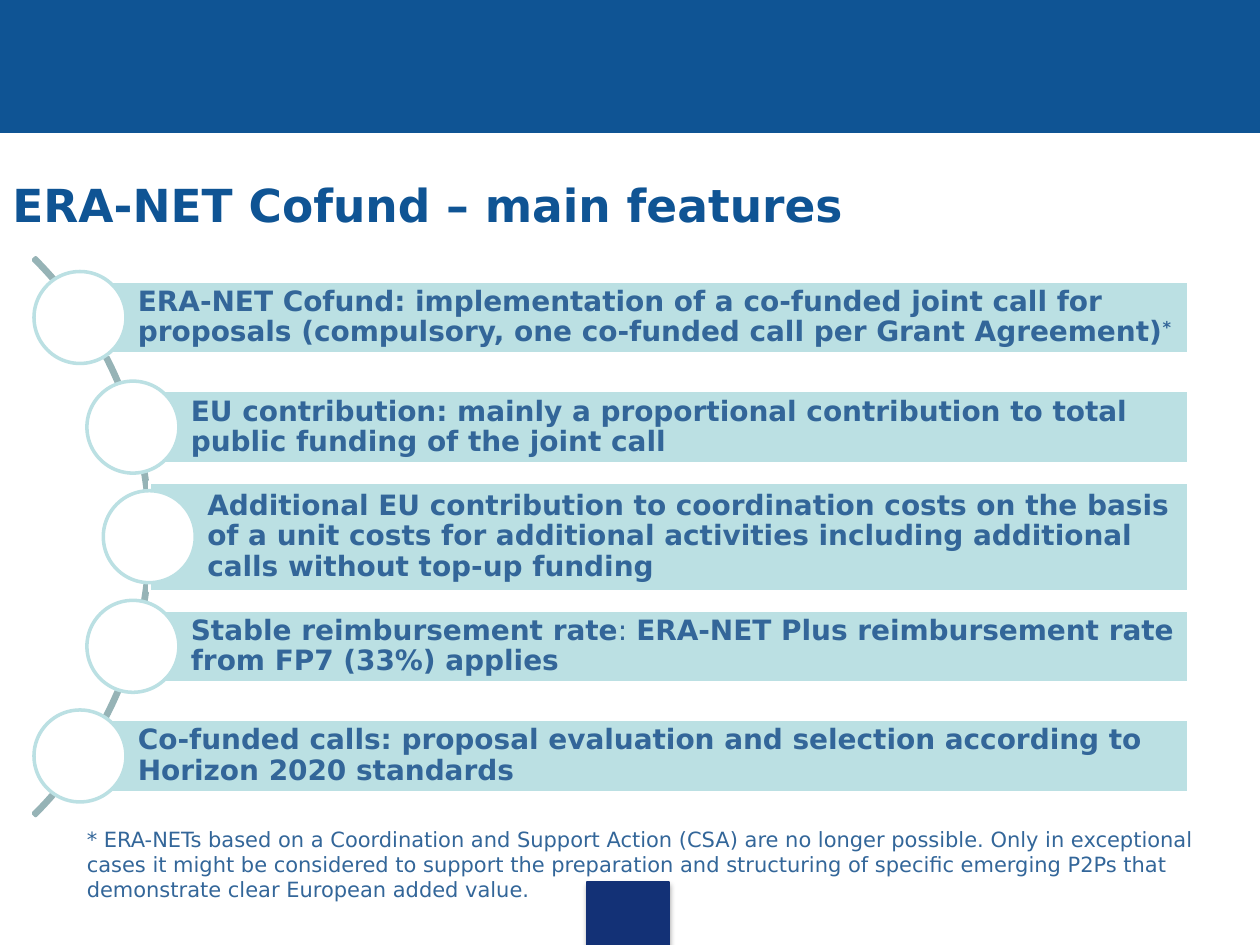
from dataclasses import dataclass
from typing import Optional

from lxml.etree import SubElement
from pptx import Presentation
from pptx.dml.color import RGBColor
from pptx.enum.shapes import MSO_SHAPE
from pptx.enum.text import MSO_ANCHOR, PP_ALIGN
from pptx.oxml.ns import qn
from pptx.util import Emu, Inches, Pt

COLORS = {
    "band": "0F5494", "badge": "133176", "arc": "96B3B6",
    "bar": "BBE0E3", "text": "336699", "white": "FFFFFF", "shadow": "000000",
}
FONT = "DejaVu Sans"
COLS, ROWS = 100, 75
BAR_RIGHT, FIRST_MIDDLE, PITCH, CIRCLE = 94.35, 25.2, 8.7, 7.3


@dataclass(frozen=True)
class Box:
    """Position and size in grid columns and rows."""
    col: float
    row: float
    cols: float
    rows: float


@dataclass(frozen=True)
class Span:
    """A stretch of text with its own style."""
    text: str
    size: float = 16
    color: str = "text"
    bold: bool = True
    baseline: int = 0
    break_after: bool = False


@dataclass(frozen=True)
class Feature:
    """One bar of the list, starting at the centre of its circle."""
    col: float
    spans: tuple
    rows: float = 5.8


FEATURES = (
    Feature(6.35, (
        Span("ERA-NET Cofund: implementation of a co-funded joint call for proposals "
             "(compulsory, one co-funded call per Grant Agreement)"),
        Span("*", baseline=30000))),
    Feature(10.55, (
        Span("EU contribution: mainly a proportional contribution to total "
             "public funding of the joint call"),)),
    Feature(11.85, (
        Span("Additional EU contribution to coordination costs on the basis of a unit costs "
             "for additional activities including additional calls without top-up funding"),), 8.7),
    Feature(10.55, (
        Span("Stable reimbursement rate"),
        Span(": ", bold=False),
        Span("ERA-NET Plus reimbursement rate from FP7 (33%) applies"))),
    Feature(6.35, (
        Span("Co-funded calls: proposal evaluation and selection according to ", break_after=True),
        Span("Horizon 2020 standards"))),
)
TITLE = Span("ERA-NET Cofund – main features", 26, "band")
FOOTNOTE = Span(
    "* ERA-NETs based on a Coordination and Support Action (CSA) are no longer possible. "
    "Only in exceptional cases it might be considered to support the preparation and structuring "
    "of specific emerging P2Ps that demonstrate clear European added value.", 12, bold=False)


def rgb(name: str) -> RGBColor:
    """Look up a named colour."""
    return RGBColor.from_string(COLORS[name])


def place(prs, box: Box) -> tuple:
    """Turn a grid box into slide lengths."""
    w, h = prs.slide_width / COLS, prs.slide_height / ROWS
    return tuple(Emu(round(v)) for v in (box.col * w, box.row * h, box.cols * w, box.rows * h))


def add_shape(prs, s, kind: MSO_SHAPE, box: Box, fill: Optional[str], line: str, width: float):
    """Draw a preset shape without a shadow."""
    sp = s.shapes.add_shape(kind, *place(prs, box))
    sp.shadow.inherit = False
    if fill:
        sp.fill.solid()
        sp.fill.fore_color.rgb = rgb(fill)
    else:
        sp.fill.background()
    sp.line.color.rgb = rgb(line)
    sp.line.width = Pt(width)
    return sp


def write(sp, spans: tuple, anchor: MSO_ANCHOR, spacing: float = 1.0) -> None:
    """Fill a shape with one left-aligned paragraph."""
    tf = sp.text_frame
    tf.word_wrap = True
    tf.vertical_anchor = anchor
    p = tf.paragraphs[0]
    p.alignment = PP_ALIGN.LEFT
    p.line_spacing = spacing
    for span in spans:
        r = p.add_run()
        r.text = span.text
        r.font.name, r.font.size, r.font.bold = FONT, Pt(span.size), span.bold
        r.font.color.rgb = rgb(span.color)
        if span.baseline:
            r.font._element.set("baseline", str(span.baseline))
        if span.break_after:
            p.add_line_break()


def add_text(prs, s, box: Box, span: Span, anchor: MSO_ANCHOR) -> None:
    """Draw a text box."""
    write(s.shapes.add_textbox(*place(prs, box)), (span,), anchor)


def add_drop_shadow(sp) -> None:
    """Give a shape a soft shadow below it."""
    effects = sp._element.spPr.find(qn("a:effectLst"))
    shadow = SubElement(effects, qn("a:outerShdw"), blurRad=str(Pt(3.1)), dist=str(Pt(1.8)),
                        dir="5400000", rotWithShape="0")
    color = SubElement(shadow, qn("a:srgbClr"), val=COLORS["shadow"])
    SubElement(color, qn("a:alpha"), val="35000")


def add_feature(prs, s, feature: Feature, middle: float) -> None:
    """Draw a bar with its text and the circle at its left end."""
    bar = Box(feature.col, middle - feature.rows / 2, BAR_RIGHT - feature.col, feature.rows)
    sp = add_shape(prs, s, MSO_SHAPE.RECTANGLE, bar, "bar", "white", 2)
    tf = sp.text_frame
    tf.margin_left = Inches(0.46)
    tf.margin_top = tf.margin_right = tf.margin_bottom = Inches(0.04)
    write(sp, feature.spans, MSO_ANCHOR.MIDDLE, 0.9)
    circle = Box(feature.col - CIRCLE / 2, middle - CIRCLE / 2, CIRCLE, CIRCLE)
    add_shape(prs, s, MSO_SHAPE.OVAL, circle, "white", "bar", 2)


def main() -> None:
    """Build the slide and save it."""
    prs = Presentation()
    prs.slide_width, prs.slide_height = Inches(10), Inches(7.5)
    s = prs.slides.add_slide(prs.slide_layouts[6])
    add_shape(prs, s, MSO_SHAPE.RECTANGLE, Box(0, 0, COLS, 10.5), "band", "band", 0.75)
    badge = add_shape(prs, s, MSO_SHAPE.RECTANGLE, Box(46.6, 70, 6.5, 5), "badge", "badge", 0.75)
    add_drop_shadow(badge)
    add_text(prs, s, Box(0, 11.5, 91.4, 9.5), TITLE, MSO_ANCHOR.MIDDLE)
    arc = add_shape(prs, s, MSO_SHAPE.BLOCK_ARC, Box(-50.6, 11.3, 62.6, 62.6), None, "arc", 2)
    for i, value in enumerate((189, 27, 0.004)):
        arc.adjustments[i] = value
    for i, feature in enumerate(FEATURES):
        add_feature(prs, s, feature, FIRST_MIDDLE + i * PITCH)
    add_text(prs, s, Box(5.9, 65.1, 92.1, 7.1), FOOTNOTE, MSO_ANCHOR.TOP)
    prs.save("out.pptx")


if __name__ == "__main__":
    main()
